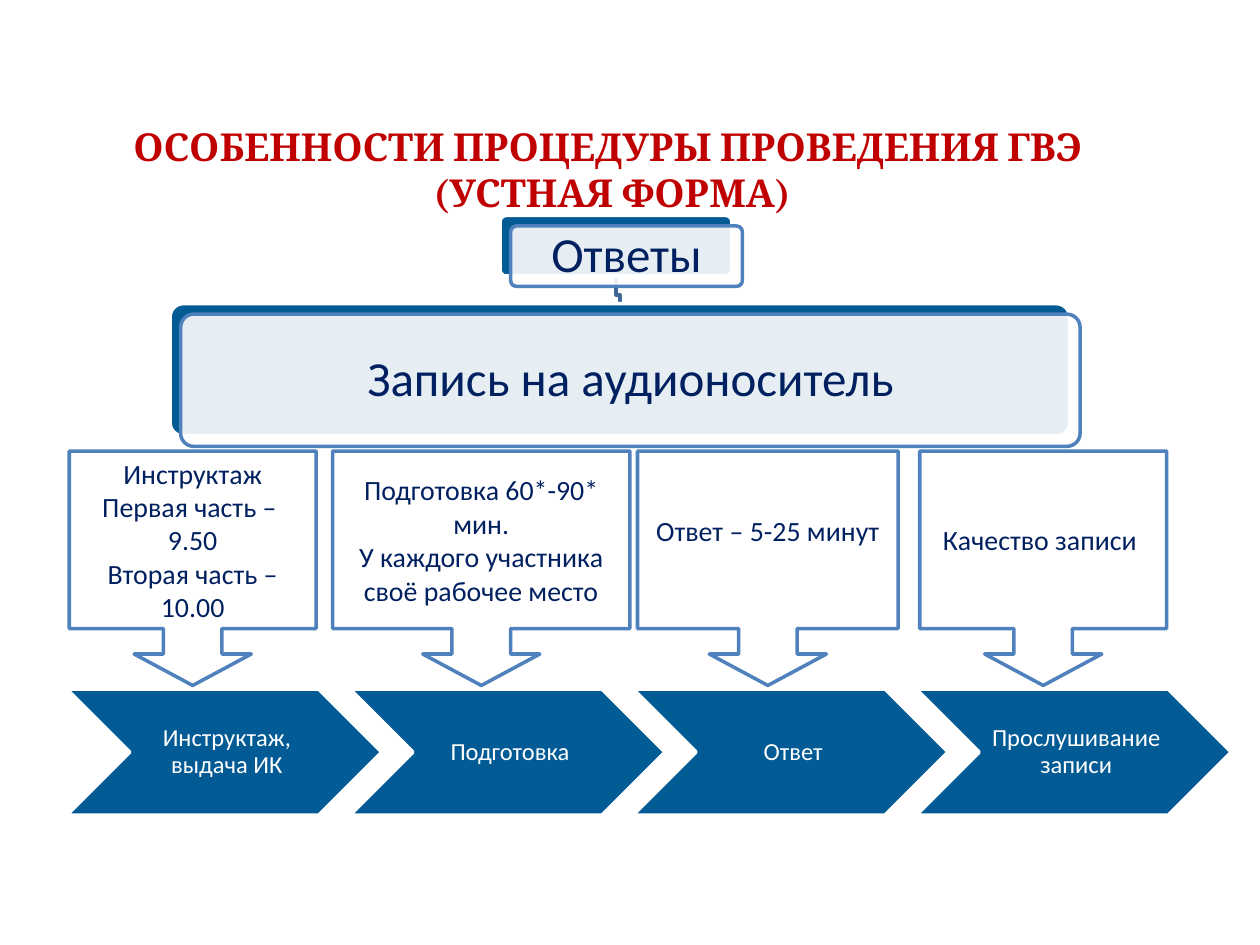
from dataclasses import dataclass

from lxml import etree
from pptx import Presentation
from pptx.dml.color import RGBColor
from pptx.enum import shapes, text
from pptx.oxml.ns import qn
from pptx.util import Pt


@dataclass(frozen=True)
class Theme:
    title: str = "C00000"
    navy: str = "002060"
    blue: str = "025B94"
    outline: str = "4F81BD"
    elbow: str = "3F6797"
    white: str = "FFFFFF"
    heading: str = "Cambria"
    body: str = "Calibri"
    title_size: float = 22
    card_size: float = 28
    callout_size: float = 15.9
    step_size: float = 14
    line: float = 2


@dataclass(frozen=True)
class Box:
    x: float
    y: float
    w: float
    h: float


@dataclass(frozen=True)
class Style:
    font: str
    size: float
    color: str
    bold: bool = False
    spacing: float = 1.0


@dataclass(frozen=True)
class Card:
    box: Box
    label: str


@dataclass(frozen=True)
class Callout:
    x: float
    w: float
    lines: tuple[str, ...]
    bottom: float = 3.6


T = Theme()
TITLE = Style(T.heading, T.title_size, T.title, bold=True)
CARD = Style(T.body, T.card_size, T.navy, spacing=0.9)
CALLOUT = Style(T.body, T.callout_size, T.navy)
STEP = Style(T.body, T.step_size, T.white, spacing=0.9)

CARD_SHIFT = 6
CALLOUT_Y, CALLOUT_H = 257.8, 133.9
STEP_X, STEP_Y, STEP_W, STEP_H, STEP_PITCH = 38.2, 393.8, 180, 72, 161.8

TITLE_LINES = ("ОСОБЕННОСТИ ПРОЦЕДУРЫ ПРОВЕДЕНИЯ ГВЭ", " (УСТНАЯ ФОРМА)")
CARDS = (
    Card(Box(285.8, 123.1, 132.5, 34.6), "Ответы"),
    Card(Box(97.2, 173.5, 514, 75.6), "Запись на аудионоситель"),
)
ELBOW = ((352, 157.7), (352, 168.5), (354.2, 168.5), (354.2, 173.5))
CALLOUTS = (
    Callout(39.6, 141.1, ("Инструктаж", "Первая часть – \n9.50", "Вторая часть – 10.00")),
    Callout(190.1, 169.9, ("Подготовка 60*-90* мин.", "У каждого участника своё рабочее место")),
    Callout(364.3, 149, ("Ответ – 5-25 минут",), bottom=14.7),
    Callout(525.6, 141.1, ("Качество записи ",)),
)
STEPS = ("Инструктаж, выдача ИК", "Подготовка", "Ответ", "Прослушивание записи")


def rgb(color: str) -> RGBColor:
    return RGBColor.from_string(color)


def write(sp, lines: tuple[str, ...], style: Style, insets=(7.2, 3.6, 7.2, 3.6)) -> None:
    tf = sp.text_frame
    tf.word_wrap = True
    tf.vertical_anchor = text.MSO_ANCHOR.MIDDLE
    tf.margin_left, tf.margin_top, tf.margin_right, tf.margin_bottom = map(Pt, insets)
    for i, line in enumerate(lines):
        p = tf.add_paragraph() if i else tf.paragraphs[0]
        p.alignment = text.PP_ALIGN.CENTER
        p.line_spacing = style.spacing
        for j, part in enumerate(line.split("\n")):
            if j:
                p.add_line_break()
            r = p.add_run()
            r.text = part
            r.font.name, r.font.size, r.font.bold = style.font, Pt(style.size), style.bold
            r.font.color.rgb = rgb(style.color)


def add_shape(s, kind, box: Box, fill: str, line: str, adj: tuple[float, ...] = ()):
    sp = s.shapes.add_shape(kind, Pt(box.x), Pt(box.y), Pt(box.w), Pt(box.h))
    sp.shadow.inherit = False
    sp.fill.solid()
    sp.fill.fore_color.rgb = rgb(fill)
    sp.line.color.rgb = rgb(line)
    sp.line.width = Pt(T.line)
    for i, value in enumerate(adj):
        sp.adjustments[i] = value
    return sp


def add_title(s) -> None:
    write(s.shapes.add_textbox(0, Pt(66.2), Pt(694.8), Pt(61.2)), TITLE_LINES, TITLE)


def add_elbow(s) -> None:
    points = [(Pt(x), Pt(y)) for x, y in ELBOW]
    fb = s.shapes.build_freeform(*points[0], scale=1.0)
    fb.add_line_segments(points[1:], close=False)
    sp = fb.convert_to_shape()
    sp.shadow.inherit = False
    sp.fill.background()
    sp.line.color.rgb = rgb(T.elbow)
    sp.line.width = Pt(T.line)


def add_card(s, card: Card) -> None:
    kind, b = shapes.MSO_SHAPE.ROUNDED_RECTANGLE, card.box
    add_shape(s, kind, b, T.blue, T.white, (0.1,))
    front = Box(b.x + CARD_SHIFT, b.y + CARD_SHIFT, b.w, b.h)
    sp = add_shape(s, kind, front, T.white, T.outline, (0.1,))
    color = sp.fill._xPr.find(qn("a:solidFill"))[0]
    etree.SubElement(color, qn("a:alpha")).set("val", "90000")
    write(sp, (card.label,), CARD, (8.6,) * 4)


def add_callout(s, c: Callout) -> None:
    box = Box(c.x, CALLOUT_Y, c.w, CALLOUT_H)
    sp = add_shape(s, shapes.MSO_SHAPE.DOWN_ARROW_CALLOUT, box, T.white, T.outline,
                   (0.25, 0.25, 0.134, 0.757))
    write(sp, c.lines, CALLOUT, (7.2, 3.6, 7.2, c.bottom))


def add_step(s, i: int, label: str) -> None:
    box = Box(STEP_X + i * STEP_PITCH, STEP_Y, STEP_W, STEP_H)
    sp = add_shape(s, shapes.MSO_SHAPE.CHEVRON, box, T.blue, T.white)
    write(sp, (label,), STEP, (4.3, 1.4, 1.4, 1.4))


def main() -> None:
    prs = Presentation()
    prs.slide_width, prs.slide_height = Pt(720), Pt(540)
    s = prs.slides.add_slide(prs.slide_layouts[6])
    add_title(s)
    add_elbow(s)
    for card in CARDS:
        add_card(s, card)
    for i, label in enumerate(STEPS):
        add_step(s, i, label)
    for callout in CALLOUTS:
        add_callout(s, callout)
    prs.save("out.pptx")


if __name__ == "__main__":
    main()
